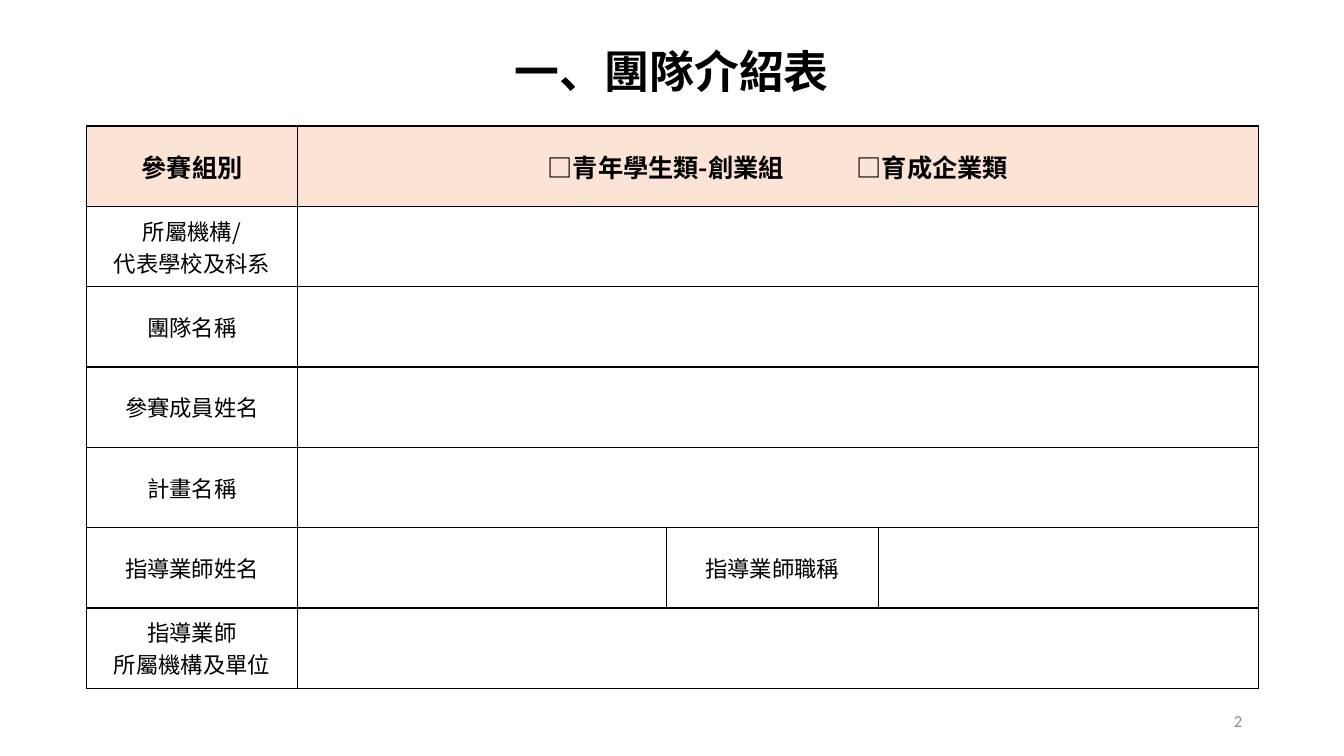
"""Build the team introduction form slide."""
from lxml import etree
from pptx import Presentation
from pptx import util as u
from pptx.dml.color import RGBColor
from pptx.enum import text
from pptx.oxml import ns

SCALE = 9144
HUES = {"ink": "000000", "head": "FBE4D5", "page": "8C8C8C"}
SANS = "Noto Sans CJK SC"
COLS = [209, 366, 210, 377]
ROWS = [
    ["參賽組別", ""],
    ["所屬機構/\n代表學校及科系", ""],
    ["團隊名稱", ""],
    ["參賽成員姓名", ""],
    ["計畫名稱", ""],
    ["指導業師姓名", "", "指導業師職稱", ""],
    ["指導業師\n所屬機構及單位", ""],
]
GROUPS = ["□青年學生類-創業組", "□育成企業類"]
GAP = 4800


def px(n):
    """Turn px into EMU."""
    return u.Emu(n * SCALE)


def style(para, size, hue="ink", bold=False, face=SANS, align="CENTER"):
    """Set the alignment and font of a paragraph."""
    para.alignment = getattr(text.PP_ALIGN, align)
    font = para.font
    font.size, font.bold, font.name = u.Pt(size), bold, face
    font.color.rgb = RGBColor.from_string(HUES[hue])
    props = para._p.pPr.find(ns.qn("a:defRPr"))
    etree.SubElement(props, ns.qn("a:ea"), typeface=face)


def label(slide, box, words, foot=5):
    """Place a line of text in the middle of a box and return its paragraph."""
    frame = slide.shapes.add_textbox(*map(px, box)).text_frame
    frame.word_wrap = True
    frame.vertical_anchor = text.MSO_ANCHOR.MIDDLE
    frame.margin_bottom = px(foot)
    frame.text = words
    return frame.paragraphs[0]


def title(slide, box):
    """Place the slide title, raised above the middle of its box."""
    para = label(slide, box, "一、團隊介紹表", foot=55)
    para.line_spacing = 1.1
    style(para, 32, bold=True)


def number(slide, box):
    """Place the page number."""
    style(label(slide, box, "2"), 12, "page", face="Calibri", align="RIGHT")


def border(cell):
    """Draw a thin line on each side of a cell."""
    props = cell._tc.get_or_add_tcPr()
    for i, side in enumerate("LRTB"):
        line = etree.Element(ns.qn("a:ln" + side), w=str(u.Pt(1)))
        fill = etree.SubElement(line, ns.qn("a:solidFill"))
        etree.SubElement(fill, ns.qn("a:srgbClr"), val=HUES["ink"])
        props.insert(i, line)


def choices(para):
    """Write the two entry groups with one wide space between them."""
    for words in (GROUPS[0], " ", GROUPS[1]):
        run = para.add_run()
        run.text = words
        if words == " ":
            run._r.get_or_add_rPr().set("spc", str(GAP))


def form(slide, box):
    """Place the form table."""
    left, top, width, height = map(px, box)
    grid = slide.shapes.add_table(
        len(ROWS), len(COLS), left, top, width, height).table
    grid.first_row = grid.horz_banding = False
    for col, wide in zip(grid.columns, COLS):
        col.width = px(wide)
    for r, labels in enumerate(ROWS):
        grid.rows[r].height = u.Emu(height // len(ROWS))
        for c in range(len(COLS)):
            cell = grid.cell(r, c)
            cell.margin_left = cell.margin_right = px(2)
            cell.margin_top = cell.margin_bottom = 0
            cell.vertical_anchor = text.MSO_ANCHOR.MIDDLE
            if r == 0:
                cell.fill.solid()
                cell.fill.fore_color.rgb = RGBColor.from_string(HUES["head"])
            else:
                cell.fill.background()
            border(cell)
            if c < len(labels):
                cell.text = labels[c]
            if (r, c) == (0, 1):
                choices(cell.text_frame.paragraphs[0])
            for para in cell.text_frame.paragraphs:
                style(para, 16 if r else 18, bold=r == 0)
        if len(labels) == 2:
            grid.cell(r, 1).merge(grid.cell(r, len(COLS) - 1))


def main():
    """Build and save the deck."""
    deck = Presentation()
    deck.slide_width, deck.slide_height = px(1333), px(750)
    slide = deck.slides.add_slide(deck.slide_layouts[6])
    title(slide, (45, 0, 1243, 184))
    number(slide, (942, 695, 300, 40))
    form(slide, (86, 125, 1162, 558))
    deck.save("out.pptx")


if __name__ == "__main__":
    main()
